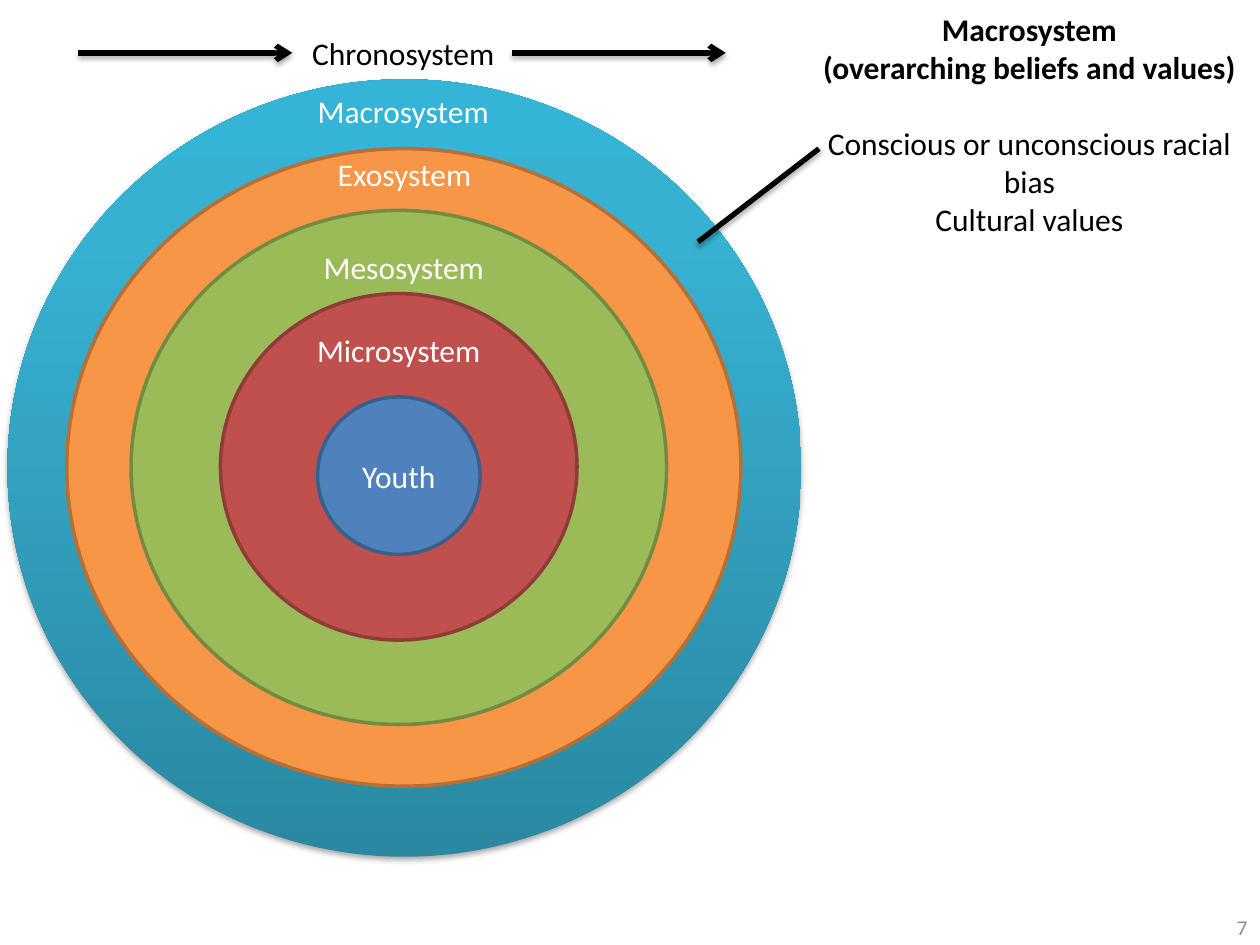
from dataclasses import dataclass

from lxml.etree import SubElement
from pptx import Presentation
from pptx.dml.color import RGBColor
from pptx.enum.shapes import MSO_CONNECTOR, MSO_SHAPE
from pptx.enum.text import MSO_ANCHOR, PP_ALIGN
from pptx.oxml.ns import qn
from pptx.util import Inches, Pt


@dataclass(frozen=True)
class Theme:
    font: str = "Calibri"
    body: int = 18
    small: int = 12
    outline: int = 2
    stroke: int = 3
    black: str = "000000"
    white: str = "FFFFFF"
    grey: str = "8C8C8C"
    macro: tuple = ((0, "2A88A2"), (80, "37B1D2"), (100, "34B4D6"))
    exo: tuple = ("F79646", "B76F34")
    meso: tuple = ("9BBB59", "738A42")
    micro: tuple = ("C0504D", "8E3B39")
    youth: tuple = ("4F81BD", "3A5F8C")


THEME = Theme()


def rgb(color):
    return RGBColor.from_string(color)


def add_shadow(effects):
    shadow = SubElement(effects, qn("a:outerShdw"), blurRad=str(Pt(3.1)),
                        dist=str(Pt(1.8)), dir="5400000", rotWithShape="0")
    color = SubElement(shadow, qn("a:srgbClr"), val=THEME.black)
    SubElement(color, qn("a:alpha"), val="35000")


def style_paragraph(para, text, color, size=THEME.body, bold=False, align=PP_ALIGN.CENTER):
    para.text = text
    para.alignment = align
    para.font.name = THEME.font
    para.font.size = Pt(size)
    para.font.bold = bold
    para.font.color.rgb = rgb(color)


def add_text(slide, place, lines, color, anchor=MSO_ANCHOR.TOP, **style):
    box = slide.shapes.add_textbox(*map(Inches, place))
    frame = box.text_frame
    frame.word_wrap = True
    frame.vertical_anchor = anchor
    for index, line in enumerate(lines):
        para = frame.paragraphs[0] if index == 0 else frame.add_paragraph()
        style_paragraph(para, line, color, **style)
    return frame


def add_ellipse(slide, place):
    ellipse = slide.shapes.add_shape(MSO_SHAPE.OVAL, *map(Inches, place))
    ellipse.shadow.inherit = False
    return ellipse


def add_ring(slide, place, colors):
    ring = add_ellipse(slide, place)
    fill, outline = colors
    ring.fill.solid()
    ring.fill.fore_color.rgb = rgb(fill)
    ring.line.color.rgb = rgb(outline)
    ring.line.width = Pt(THEME.outline)
    return ring


def add_gradient_disc(slide, place, stops):
    disc = add_ellipse(slide, place)
    disc.line.fill.background()
    disc.fill.gradient()
    disc.fill.gradient_angle = 90
    properties = disc._element.spPr
    stop_list = properties.find(qn("a:gradFill")).find(qn("a:gsLst"))
    stop_list.clear()
    for position, color in stops:
        stop = SubElement(stop_list, qn("a:gs"), pos=str(position * 1000))
        SubElement(stop, qn("a:srgbClr"), val=color)
    add_shadow(properties.find(qn("a:effectLst")))


def add_line(slide, start, end, arrow=False):
    points = map(Inches, (*start, *end))
    line = slide.shapes.add_connector(MSO_CONNECTOR.STRAIGHT, *points)
    line.line.color.rgb = rgb(THEME.black)
    line.line.width = Pt(THEME.stroke)
    properties = line._element.spPr
    if arrow:
        SubElement(properties.find(qn("a:ln")), qn("a:tailEnd"), type="arrow")
    add_shadow(SubElement(properties, qn("a:effectLst")))


def add_systems(slide):
    add_gradient_disc(slide, (0.06, 0.63, 6.3, 6.17), THEME.macro)
    add_text(slide, (2.06, 0.68, 2.28, 0.4), ["Macrosystem"], THEME.white)
    rings = [
        ("Exosystem", (0.53, 1.18, 5.35, 5.06), (1.92, 1.18, 2.58, 0.4), THEME.exo),
        ("Mesosystem", (1.04, 1.67, 4.25, 4.08), (2.04, 1.92, 2.33, 0.4), THEME.meso),
        ("Microsystem", (1.75, 2.33, 2.83, 2.75), (2.33, 2.58, 1.67, 0.4), THEME.micro),
    ]
    for name, ring_place, label_place, colors in rings:
        add_ring(slide, ring_place, colors)
        add_text(slide, label_place, [name], THEME.white)
    youth = add_ring(slide, (2.52, 3.15, 1.29, 1.25), THEME.youth)
    youth.text_frame.vertical_anchor = MSO_ANCHOR.MIDDLE
    style_paragraph(youth.text_frame.paragraphs[0], "Youth", THEME.white)


def add_chronosystem(slide):
    add_text(slide, (2.34, 0.22, 1.72, 0.4), ["Chronosystem"], THEME.black)
    for left in (0.62, 4.06):
        add_line(slide, (left, 0.42), (left + 1.7, 0.42), arrow=True)


def add_explanation(slide):
    lines = ["Macrosystem", "(overarching beliefs and values)",
             "Conscious or unconscious racial bias", "Cultural values"]
    frame = add_text(slide, (6.32, 0.03, 3.7, 2.52), lines, THEME.black)
    for para in frame.paragraphs[:2]:
        para.font.bold = True
    frame.paragraphs[2].space_before = Pt(22)
    add_line(slide, (5.54, 1.92), (6.5, 1.18))


def main():
    deck = Presentation()
    deck.slide_width, deck.slide_height = Inches(10), Inches(7.5)
    slide = deck.slides.add_slide(deck.slide_layouts[6])
    add_systems(slide)
    add_chronosystem(slide)
    add_explanation(slide)
    add_text(slide, (7.67, 7.16, 2.33, 0.4), ["7"], THEME.grey,
             anchor=MSO_ANCHOR.MIDDLE, size=THEME.small, align=PP_ALIGN.RIGHT)
    deck.save("out.pptx")


if __name__ == "__main__":
    main()
